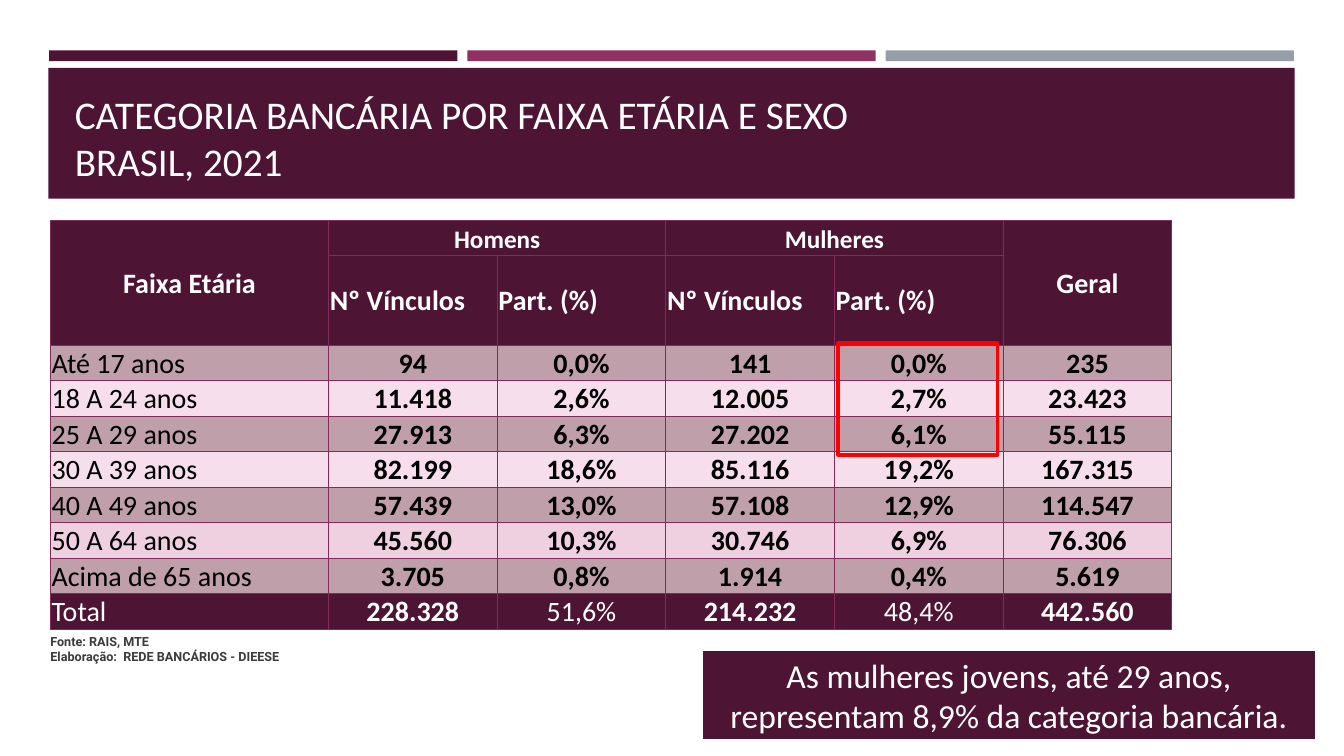
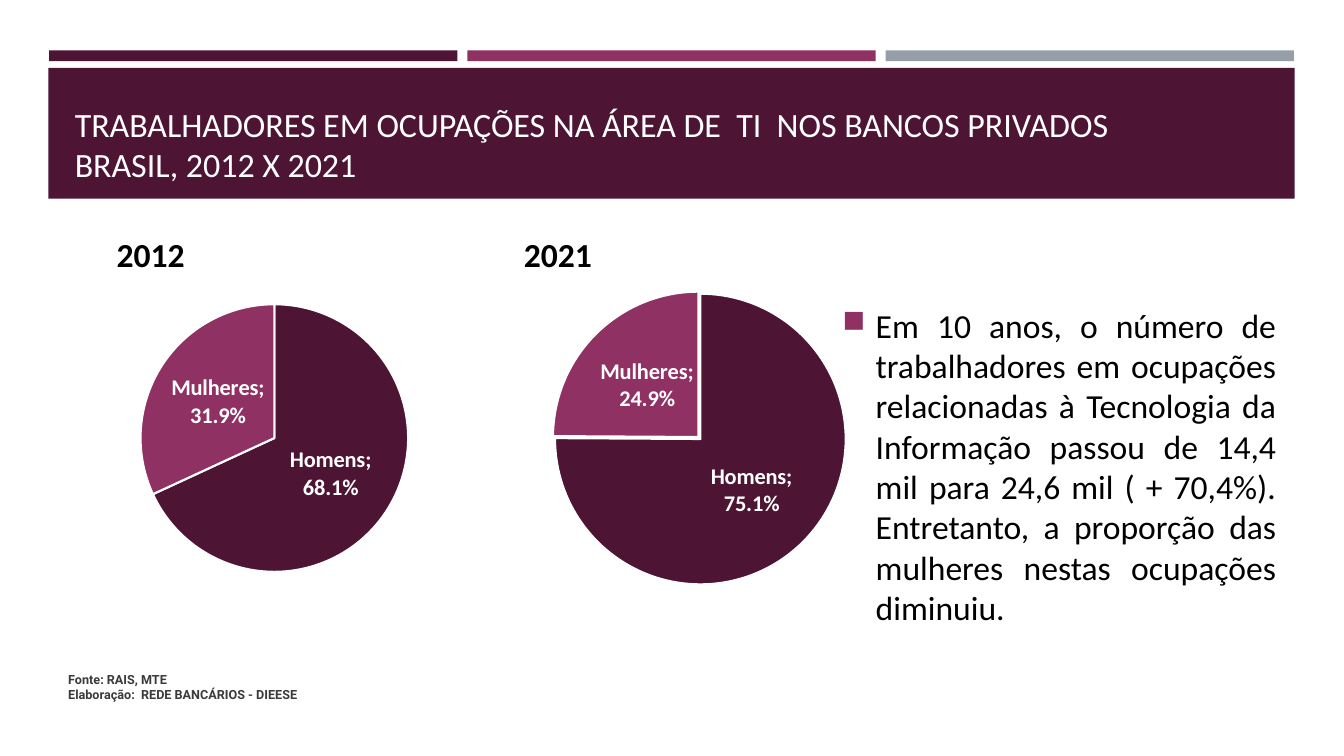
from pptx import Presentation
from pptx.chart.data import CategoryChartData
from pptx.dml.color import RGBColor
from pptx.enum.chart import XL_CHART_TYPE as CHART, XL_LABEL_POSITION as LABEL
from pptx.enum.shapes import MSO_SHAPE as SHAPE
from pptx.enum.text import MSO_ANCHOR as ANCHOR, PP_ALIGN as ALIGN
from pptx.oxml import parse_xml
from pptx.oxml.ns import nsdecls
from pptx.util import Cm, Pt

PLUM, BERRY, GREY = "4D1434", "903163", "969FA7"
WHITE, BLACK, RED, INK = "FFFFFF", "000000", "FF0000", "3B3B3B"
MAUVE, PINK, ROSE, BORDER = "BE9FAA", "F6DEEC", "EFD0E0", "822C59"
FONT, SOURCE_FONT = "Calibri", "Roboto"

TITLE_BOX = (1.63, 1.96, 30.63, 2.82)
BANNER_BOX = (1.22, 1.71, 31.41, 3.3)
BAR_LEFT, BAR_TOP, BAR_W, BAR_H, BAR_PITCH = 1.24, 1.27, 10.29, 0.27, 10.54

SOURCE = ("Fonte: RAIS, MTE", "Elaboração:  REDE BANCÁRIOS - DIEESE")

HEADERS = [
    ("Faixa Etária", "Homens", "", "Mulheres", "", "Geral"),
    ("", "Nº Vínculos", "Part. (%)", "Nº Vínculos", "Part. (%)", ""),
]
AGE_ROWS = [
    ("Até 17 anos", "94", "0,0%", "141", "0,0%", "235"),
    ("18 A 24 anos", "11.418", "2,6%", "12.005", "2,7%", "23.423"),
    ("25 A 29 anos", "27.913", "6,3%", "27.202", "6,1%", "55.115"),
    ("30 A 39 anos", "82.199", "18,6%", "85.116", "19,2%", "167.315"),
    ("40 A 49 anos", "57.439", "13,0%", "57.108", "12,9%", "114.547"),
    ("50 A 64 anos", "45.560", "10,3%", "30.746", "6,9%", "76.306"),
    ("Acima de 65 anos", "3.705", "0,8%", "1.914", "0,4%", "5.619"),
]
TOTAL = ("Total", "228.328", "51,6%", "214.232", "48,4%", "442.560")
ROW_FILLS = [MAUVE, PINK, MAUVE, PINK, MAUVE, ROSE, MAUVE]
MERGES = [((0, 0), (1, 0)), ((0, 1), (0, 2)), ((0, 3), (0, 4)), ((0, 5), (1, 5))]


def rgb(color):
    return RGBColor.from_string(color)


def cm(box):
    return [Cm(v) for v in box]


def set_font(font, size, color, bold=False, name=FONT):
    for key, value in dict(size=Pt(size), bold=bold, name=name).items():
        setattr(font, key, value)
    font.color.rgb = rgb(color)


def write(tf, lines, size, color, align=ALIGN.LEFT, bold=False, name=FONT):
    """Fill a text frame with one paragraph for each line."""
    for i, line in enumerate(lines):
        p = tf.add_paragraph() if i else tf.paragraphs[0]
        p.text, p.alignment = line, align
        for r in p.runs:
            set_font(r.font, size, color, bold, name)


def add_rect(slide, box, fill=None, line=None, width=1):
    sp = slide.shapes.add_shape(SHAPE.RECTANGLE, *cm(box))
    sp.shadow.inherit = False
    if fill:
        sp.fill.solid()
        sp.fill.fore_color.rgb = rgb(fill)
    else:
        sp.fill.background()
    if line:
        sp.line.color.rgb, sp.line.width = rgb(line), Pt(width)
    else:
        sp.line.fill.background()
    return sp


def add_text(slide, box, lines, size, color, **style):
    tf = slide.shapes.add_textbox(*cm(box)).text_frame
    tf.word_wrap = True
    write(tf, lines, size, color, **style)
    return tf


def add_source(slide, left, top):
    add_text(slide, (left, top, 16.94, 1.02), SOURCE, 9, INK, bold=True, name=SOURCE_FONT)


def style_layout(layout, slide):
    """Give the layout its bars, banner and title place; they are drawn on slide and moved."""
    for ph in list(layout.placeholders):
        if ph.placeholder_format.idx:
            ph.element.getparent().remove(ph.element)
    title = layout.placeholders[0]
    for key, value in zip(("left", "top", "width", "height"), cm(TITLE_BOX)):
        setattr(title, key, value)
    title.text_frame.vertical_anchor = ANCHOR.BOTTOM
    parts = [add_rect(slide, (BAR_LEFT + i * BAR_PITCH, BAR_TOP, BAR_W, BAR_H), color)
             for i, color in enumerate((PLUM, BERRY, GREY))]
    parts.append(add_rect(slide, BANNER_BOX, PLUM))
    for i, sp in enumerate(parts):
        layout.shapes.element.insert(2 + i, sp.element)


def set_title(slide, text, size):
    tf = slide.shapes.title.text_frame
    tf.word_wrap = True
    tf.vertical_anchor = ANCHOR.BOTTOM
    write(tf, [text], size, WHITE)


def add_borders(cell, color, width):
    tc_pr = cell._tc.get_or_add_tcPr()
    for i, side in enumerate(("lnL", "lnR", "lnT", "lnB")):
        tc_pr.insert(i, parse_xml(
            f'<a:{side} {nsdecls("a")} w="{Pt(width)}"><a:solidFill>'
            f'<a:srgbClr val="{color}"/></a:solidFill></a:{side}>'))


def style_cell(cell, text, fill, anchor, **style):
    margins = dict(margin_left=0.03, margin_right=0.03, margin_top=0.03, margin_bottom=0)
    for key, value in margins.items():
        setattr(cell, key, Cm(value))
    cell.vertical_anchor = anchor
    cell.fill.solid()
    cell.fill.fore_color.rgb = rgb(fill)
    write(cell.text_frame, [text], **style)
    add_borders(cell, BORDER, 1)


def add_age_table(slide, left, top):
    rows = HEADERS + AGE_ROWS + [TOTAL]
    widths = [7.01] + [4.25] * 5
    heights = [0.87, 2.27] + [0.89] * (len(rows) - 2)
    box = (left, top, sum(widths), sum(heights))
    table = slide.shapes.add_table(len(rows), len(widths), *cm(box)).table
    table.first_row = table.horz_banding = False
    for column, width in zip(table.columns, widths):
        column.width = Cm(width)
    for row, height in zip(table.rows, heights):
        row.height = Cm(height)
    fills = [PLUM] * len(HEADERS) + ROW_FILLS + [PLUM]
    for r, (row, fill) in enumerate(zip(rows, fills)):
        header, total = r < len(HEADERS), row is TOTAL
        for c, text in enumerate(row):
            group = r == 0 and 0 < c < 5
            left_aligned = 0 < c < 5 if r == 1 else c == 0 and not header
            style_cell(
                table.cell(r, c), text, fill,
                ANCHOR.MIDDLE if header and not group else ANCHOR.BOTTOM,
                size=18 if group else 20,
                color=WHITE if header or total else BLACK,
                align=ALIGN.LEFT if left_aligned else ALIGN.CENTER,
                bold=header or (c > 0 and not (total and "%" in text)))
    for first, last in MERGES:
        table.cell(*first).merge(table.cell(*last))


def add_callout(slide, box, text):
    sp = add_rect(slide, box, PLUM, WHITE, 2)
    sp.text_frame.word_wrap = True
    sp.text_frame.vertical_anchor = ANCHOR.MIDDLE
    write(sp.text_frame, [text], 24, WHITE, align=ALIGN.CENTER)


def set_plot_area(chart, w, h):
    """Centre the plot, with its size as shares of the chart."""
    values = dict(x=(1 - w) / 2, y=(1 - h) / 2, w=w, h=h)
    modes = '<c:layoutTarget val="inner"/><c:xMode val="edge"/><c:yMode val="edge"/>'
    sizes = "".join(f'<c:{key} val="{value:.3f}"/>' for key, value in values.items())
    plot_area = chart.element.chart.plotArea
    for old in plot_area.xpath("c:layout"):
        plot_area.remove(old)
    plot_area.insert(0, parse_xml(
        f'<c:layout {nsdecls("c")}><c:manualLayout>{modes}{sizes}</c:manualLayout></c:layout>'))


def add_gender_pie(slide, box, shares, diameter, explosion=0):
    data = CategoryChartData(number_format="0.0%")
    data.categories = ["Homens", "Mulheres"]
    data.add_series("Series 1", shares)
    chart = slide.shapes.add_chart(CHART.PIE, *cm(box), data).chart
    chart.has_legend = chart.has_title = False
    set_font(chart.font, 10, BLACK)
    set_plot_area(chart, diameter / box[2], diameter / box[3])

    plot = chart.plots[0]
    plot.vary_by_categories = True
    series = plot.series[0]
    for i, color in enumerate((PLUM, BERRY)):
        fmt = series.points[i].format
        fmt.fill.solid()
        fmt.fill.fore_color.rgb = rgb(color)
        fmt.line.color.rgb, fmt.line.width = rgb(WHITE), Pt(1.5)
    if explosion:
        series._element.xpath("c:dPt")[0].addprevious(
            parse_xml(f'<c:explosion {nsdecls("c")} val="{explosion}"/>'))

    labels = series.data_labels
    options = dict(show_value=True, show_category_name=True, show_percentage=False,
                   number_format="0.0%", number_format_is_linked=False,
                   position=LABEL.CENTER)
    for key, value in options.items():
        setattr(labels, key, value)
    set_font(labels.font, 16, WHITE, bold=True)
    labels._element.xpath("c:showBubbleSize")[0].addnext(
        parse_xml(f'<c:separator {nsdecls("c")}>; </c:separator>'))


def add_bullet(slide, box, text):
    tf = add_text(slide, box, [text], 24, BLACK, align=ALIGN.JUSTIFY)
    tf.vertical_anchor = ANCHOR.MIDDLE
    p = tf.paragraphs[0]
    p.space_before, p.space_after = Pt(4.8), Pt(6)
    p_pr = p._p.get_or_add_pPr()
    p_pr.set("marL", str(Cm(0.84)))
    p_pr.set("indent", str(-Cm(0.84)))
    for xml in (f'<a:buClr {nsdecls("a")}><a:srgbClr val="{BERRY}"/></a:buClr>',
                f'<a:buSzPct {nsdecls("a")} val="92000"/>',
                f'<a:buChar {nsdecls("a")} char="■"/>'):
        p_pr.append(parse_xml(xml))


def build_age_slide(slide):
    set_title(slide, "CATEGORIA BANCÁRIA POR FAIXA ETÁRIA E SEXO\vBRASIL, 2021", 28)
    add_age_table(slide, 1.27, 5.56)
    add_callout(slide, (17.68, 16.36, 15.49, 2.31),
                "As mulheres jovens, até 29 anos, representam 8,9% da categoria bancária.")
    add_rect(slide, (21.13, 8.64, 4.01, 2.82), line=RED, width=2.75)
    add_source(slide, 1.02, 15.85)


def build_it_slide(slide):
    set_title(slide, "TRABALHADORES EM OCUPAÇÕES NA ÁREA DE  TI  NOS BANCOS PRIVADOS"
                     "\vBRASIL, 2012 X 2021", 24.3)
    top = 5.77
    pies = [("2012", 1.47, 2.69, (0.681, 0.319), 6.75, 0),
            ("2021", 12.17, 12.95, (0.751, 0.249), 7.4, 1)]
    for year, left, label_left, shares, diameter, explosion in pies:
        add_gender_pie(slide, (left, top, 10.9, 10.54), shares, diameter, explosion)
        add_text(slide, (label_left, top, 6.88, 1.3), [year], 24, BLACK, bold=True)
    add_bullet(slide, (20.98, top, 11.43, 11.94),
               "Em 10 anos, o número de trabalhadores em ocupações relacionadas à "
               "Tecnologia da Informação passou de 14,4 mil para 24,6 mil ( + 70,4%). "
               "Entretanto, a proporção das mulheres nestas ocupações diminuiu.")
    add_source(slide, 1.47, 16.81)


def main():
    prs = Presentation()
    prs.slide_width, prs.slide_height = Cm(33.87), Cm(19.05)
    layout = prs.slide_layouts[5]
    slides = [prs.slides.add_slide(layout) for _ in range(2)]
    style_layout(layout, slides[0])
    build_age_slide(slides[0])
    build_it_slide(slides[1])
    prs.save("out.pptx")


if __name__ == "__main__":
    main()
